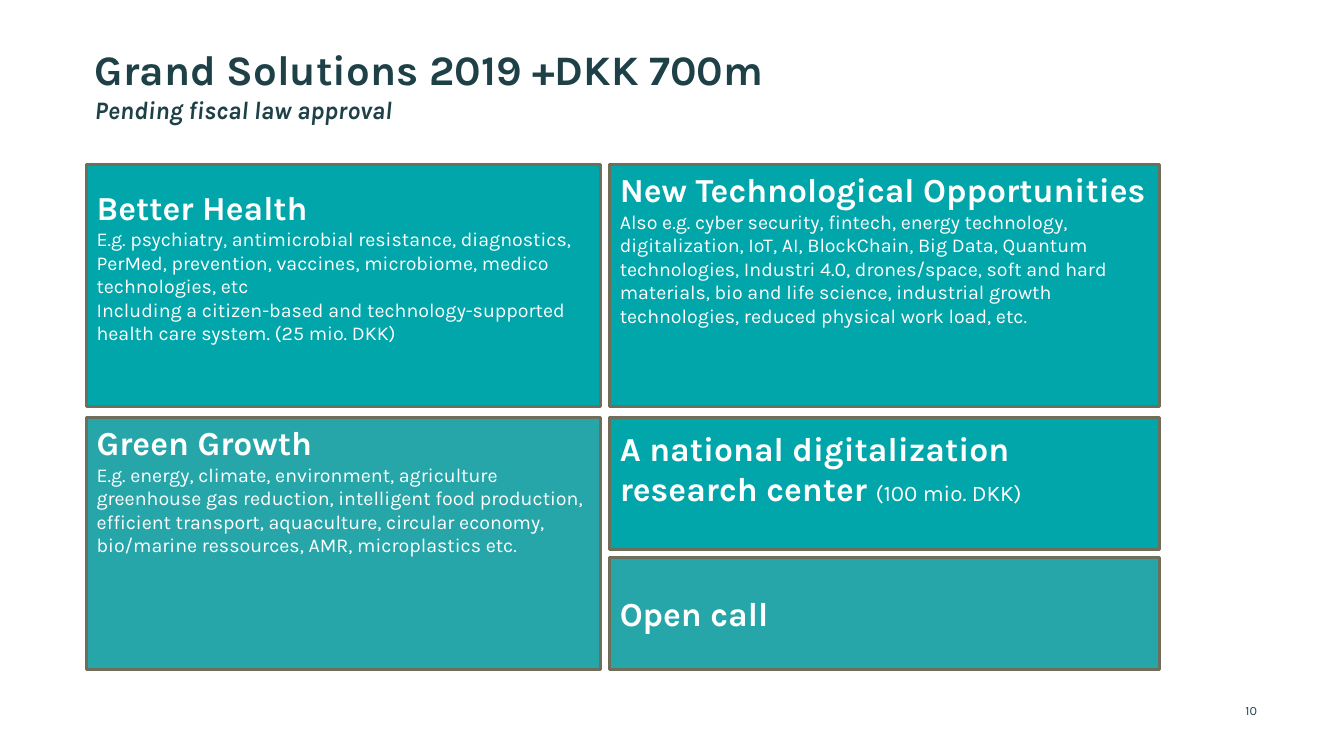
from dataclasses import dataclass

import pptx
import pptx.dml.color
import pptx.enum.shapes
import pptx.enum.text
import pptx.util

Pt = pptx.util.Pt
Anchor = pptx.enum.text.MSO_ANCHOR
Align = pptx.enum.text.PP_ALIGN


@dataclass(frozen=True)
class Theme:
    font: str = "Karla"
    ink: str = "1E4148"
    white: str = "FFFFFF"
    teal: str = "00A6AA"
    soft_teal: str = "27A6AA"
    border: str = "6E6E5A"
    border_width: float = 2.25
    title: int = 30
    subtitle: int = 18
    heading: int = 24
    aside: int = 16
    body: int = 14
    page_number: int = 9


@dataclass(frozen=True)
class Box:
    left: float
    top: float
    width: float
    height: float


@dataclass(frozen=True)
class Span:
    text: str
    size: int
    bold: bool = False
    italic: bool = False


@dataclass(frozen=True)
class Card:
    box: Box
    fill: str
    paragraphs: tuple[tuple[Span, ...], ...]
    anchor: Anchor = Anchor.TOP
    bottom_inset: float = 3.6


THEME = Theme()
LEFT_COLUMN, LEFT_WIDTH = 61.9, 367.2
RIGHT_COLUMN, RIGHT_WIDTH = 435.6, 392.4
UPPER_ROW, UPPER_HEIGHT = 117.4, 172.8
LOWER_ROW, LOWER_HEIGHT = 298.1, 180
CENTER_HEIGHT, CALL_HEIGHT = 94.3, 79.9


def heading(text: str) -> Span:
    return Span(text, THEME.heading, bold=True)


def body(text: str) -> Span:
    return Span(text, THEME.body)


CARDS = (
    Card(Box(LEFT_COLUMN, LOWER_ROW, LEFT_WIDTH, LOWER_HEIGHT), THEME.soft_teal, (
        (heading("Green Growth"),),
        (body("E.g. energy, climate, environment, agriculture greenhouse gas reduction, "
              "intelligent food production, efficient transport, aquaculture, circular "
              "economy, bio/marine ressources, AMR, microplastics etc."),),
    )),
    Card(Box(RIGHT_COLUMN, UPPER_ROW, RIGHT_WIDTH, UPPER_HEIGHT), THEME.teal, (
        (heading("New Technological Opportunities"),),
        (body("Also e.g. cyber security, fintech, energy technology, digitalization, IoT, "
              "AI, BlockChain, Big Data, Quantum technologies, Industri 4.0, drones/space, "
              "soft and hard materials, bio and life science, industrial growth "
              "technologies, reduced physical work load, etc."),),
    )),
    Card(Box(LEFT_COLUMN, UPPER_ROW, LEFT_WIDTH, UPPER_HEIGHT), THEME.teal, (
        (heading("Better Health"),),
        (body("E.g. psychiatry, antimicrobial resistance, diagnostics, PerMed, prevention, "
              "vaccines, microbiome, medico technologies, etc"),),
        (body("Including a citizen-based and technology-supported health care system. "
              "(25 mio. DKK)"),),
    ), Anchor.MIDDLE, bottom_inset=31.6),
    Card(Box(RIGHT_COLUMN, LOWER_ROW, RIGHT_WIDTH, CENTER_HEIGHT), THEME.teal, (
        (heading("A national digitalization research center "),
         Span("(100 mio. DKK)", THEME.aside)),
    ), Anchor.MIDDLE, bottom_inset=25),
    Card(Box(RIGHT_COLUMN, LOWER_ROW + LOWER_HEIGHT - CALL_HEIGHT, RIGHT_WIDTH, CALL_HEIGHT),
         THEME.soft_teal, ((heading("Open call"),),), Anchor.MIDDLE),
)


def rgb(color: str) -> pptx.dml.color.RGBColor:
    return pptx.dml.color.RGBColor.from_string(color)


def place(box: Box) -> tuple[int, int, int, int]:
    return Pt(box.left), Pt(box.top), Pt(box.width), Pt(box.height)


def add_span(paragraph, span: Span, color: str) -> None:
    run = paragraph.add_run()
    run.text = span.text
    run.font.name = THEME.font
    run.font.size = Pt(span.size)
    run.font.bold = span.bold
    run.font.italic = span.italic
    run.font.color.rgb = rgb(color)


def add_label(slide, box: Box, lines: tuple[Span, ...], anchor: Anchor, alignment: Align) -> None:
    """Add an inset-free text box whose lines share one paragraph."""
    frame = slide.shapes.add_textbox(*place(box)).text_frame
    frame.word_wrap = True
    frame.vertical_anchor = anchor
    frame.margin_left = frame.margin_right = frame.margin_top = frame.margin_bottom = Pt(0)
    paragraph = frame.paragraphs[0]
    paragraph.alignment = alignment
    for index, line in enumerate(lines):
        if index:
            paragraph.add_line_break()
        add_span(paragraph, line, THEME.ink)


def add_card(slide, card: Card) -> None:
    shape = slide.shapes.add_shape(pptx.enum.shapes.MSO_SHAPE.RECTANGLE, *place(card.box))
    shape.shadow.inherit = False
    shape.fill.solid()
    shape.fill.fore_color.rgb = rgb(card.fill)
    shape.line.color.rgb = rgb(THEME.border)
    shape.line.width = Pt(THEME.border_width)
    frame = shape.text_frame
    frame.word_wrap = True
    frame.vertical_anchor = card.anchor
    frame.margin_bottom = Pt(card.bottom_inset)
    for index, spans in enumerate(card.paragraphs):
        paragraph = frame.add_paragraph() if index else frame.paragraphs[0]
        paragraph.alignment = Align.LEFT
        for span in spans:
            add_span(paragraph, span, THEME.white)


def main() -> None:
    presentation = pptx.Presentation()
    presentation.slide_width, presentation.slide_height = Pt(960), Pt(540)
    slide = presentation.slides.add_slide(presentation.slide_layouts[6])
    title = (Span("Grand Solutions 2019 +DKK 700m", THEME.title, bold=True),
             Span("Pending fiscal law approval", THEME.subtitle, bold=True, italic=True))
    add_label(slide, Box(67.7, 31, 869, 36.7), title, Anchor.TOP, Align.LEFT)
    page_number = (Span("10", THEME.page_number),)
    add_label(slide, Box(866.9, 493.2, 31, 28.8), page_number, Anchor.MIDDLE, Align.RIGHT)
    for card in CARDS:
        add_card(slide, card)
    presentation.save("out.pptx")


if __name__ == "__main__":
    main()
